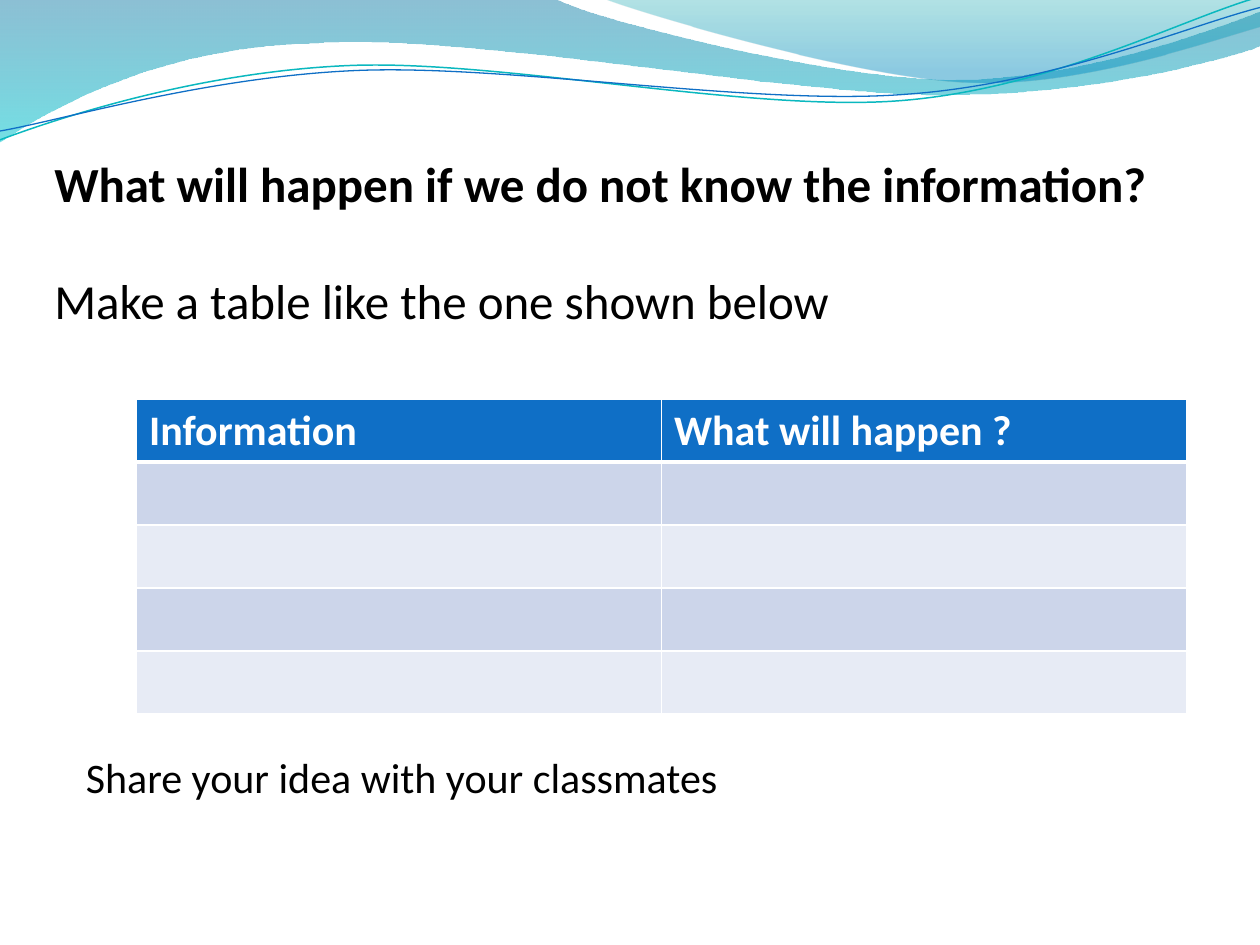
"""Build a classroom slide with a wave banner, a question and a table to fill in."""
import math

from lxml import etree
from pptx import Presentation
from pptx import util as u
from pptx.dml.color import RGBColor
from pptx.enum import text
from pptx.oxml.ns import qn

THEME = {
    "font": "Calibri", "ink": "000000", "paper": "FFFFFF", "header": "0F6FC6",
    "bands": ["CCD5EA", "E7EBF5"], "question": 28, "body": 24,
    "rule": 1, "header_rule": 3,
}
FRAME = {"word_wrap": True, "auto_size": text.MSO_AUTO_SIZE.SHAPE_TO_FIT_TEXT}
TILT = -2.7

deck = Presentation()
deck.slide_width, deck.slide_height = u.Inches(10), u.Inches(7.5)
slide = deck.slides.add_slide(deck.slide_layouts[6])
COL, ROW = deck.slide_width / 120, deck.slide_height / 90


def draw_wave(start, segments, closed):
    """Outline straight (one point) and cubic (three points) segments."""
    points = [start] + [point for segment in segments for point in segment]
    places = [(round(x * 12 * COL), round(y * 12 * ROW)) for x, y in points]
    builder = slide.shapes.build_freeform(*places[0])
    builder.add_line_segments(places[1:], close=closed)
    wave = builder.convert_to_shape()
    wave.shadow.inherit = False
    steps = iter(list(wave._element.iter(qn("a:lnTo"))))
    for segment in segments:
        first, *others = [next(steps) for _ in segment]
        if others:
            curve = etree.Element(qn("a:cubicBezTo"))
            first.addprevious(curve)
            for step in (first, *others):
                curve.append(step[0])
                step.getparent().remove(step)
    return wave


def write(paragraph, words, size, bold=False, color=THEME["ink"]):
    """Add one formatted run to a paragraph."""
    run = paragraph.add_run()
    run.text = words
    look = {"name": THEME["font"], "size": u.Pt(size), "bold": bold}
    for name, value in look.items():
        setattr(run.font, name, value)
    run.font.color.rgb = RGBColor.from_string(color)


swells = [
    ((0, 0), [
        [(4.4, -0.01)],
        [(4.76, 0.17), (6.64, 0.63), (7.58, 0.63)],
        [(8.53, 0.63), (9.58, 0.26), (10, 0.09)],
        [(10.01, 0.36)],
        [(9.83, 0.44), (8.7, 0.76), (7.46, 0.75)],
        [(6.22, 0.75), (3.82, 0.28), (2.57, 0.34)],
        [(1.29, 0.36), (0.46, 0.83), (-0.01, 1.13)],
        [(0, 0)],
    ], [(0, "0074A1", 45), (1, "00C6CF", 55)]),
    ((4.79, -0.01), [
        [(5.09, 0.11), (6.82, 0.62), (7.69, 0.65)],
        [(8.56, 0.69), (9.61, 0.32), (10, 0.21)],
        [(10, 0)],
        [(4.79, -0.01)],
    ], [(0, "00A1A9", 30), (0.8, "008BBF", 45)]),
]
for start, segments, tints in swells:
    swell = draw_wave(start, segments, True)
    swell.line.fill.background()
    swell.fill.gradient()
    swell.fill.gradient_angle = 270
    for stop, (position, color, _) in zip(swell.fill.gradient_stops, tints):
        stop.position = position
        stop.color.rgb = RGBColor.from_string(color)
    for tint, (_, _, opacity) in zip(swell._element.spPr.iter(qn("a:srgbClr")), tints):
        etree.SubElement(tint, qn("a:alpha"), val=str(opacity * 1000))

ripples = [
    ((4.99, 0.58), (0, 1.11), [
        [(0.48, 0.93), (1.58, 0.57), (2.77, 0.52)],
        [(3.95, 0.47), (5.93, 0.89), (7.13, 0.8)],
        [(8.33, 0.71), (9.38, 0.15), (9.98, -0.02)],
    ], "0AB8BF", 0.85),
    ((5, 0.59), (0, 1.04), [
        [(0.47, 0.96), (1.64, 0.61), (2.83, 0.56)],
        [(4.03, 0.51), (5.97, 0.84), (7.17, 0.75)],
        [(8.36, 0.67), (9.41, 0.21), (10, 0.06)],
    ], "0F6FC6", 0.75),
]
cos, sin = math.cos(math.radians(TILT)), math.sin(math.radians(TILT))
for (mid_x, mid_y), start, segments, color, width in ripples:
    (start,), *segments = [
        [(mid_x + (x - mid_x) * cos + (y - mid_y) * sin,
          mid_y + (y - mid_y) * cos - (x - mid_x) * sin) for x, y in segment]
        for segment in ([start], *segments)
    ]
    ripple = draw_wave(start, segments, False)
    ripple.rotation = TILT
    ripple.fill.background()
    ripple.line.color.rgb = RGBColor.from_string(color)
    ripple.line.width = u.Pt(width)

passages = [
    ((4, 14, 113, 22.2), THEME["question"], [
        ("What will happen if we do not know the information?", True, 0),
        ("Make a table like the one shown below", False, 33.5),
    ]),
    ((7, 71, 113, 6), THEME["body"], [("Share your idea with your classmates", False, 0)]),
]
for (left, top, width, height), size, lines in passages:
    passage = slide.shapes.add_textbox(
        round(left * COL), round(top * ROW), round(width * COL), round(height * ROW)
    ).text_frame
    for name, value in FRAME.items():
        setattr(passage, name, value)
    for index, (words, bold, gap) in enumerate(lines):
        paragraph = passage.add_paragraph() if index else passage.paragraphs[0]
        paragraph.space_before = u.Pt(gap)
        write(paragraph, words, size, bold)

headings = ["Information", "What will happen ?"]
answers = slide.shapes.add_table(
    5, len(headings), round(13 * COL), round(38 * ROW), round(100 * COL), round(30 * ROW)
).table
for r, row in enumerate(answers.rows):
    for c, cell in enumerate(row.cells):
        rules = dict.fromkeys(("lnL", "lnR", "lnT", "lnB"), THEME["rule"])
        if r < 2:
            rules["lnT" if r else "lnB"] = THEME["header_rule"]
        for side, weight in rules.items():
            rule = etree.SubElement(cell._tc.get_or_add_tcPr(), qn(f"a:{side}"),
                                    w=str(u.Pt(weight)))
            paint = etree.SubElement(rule, qn("a:solidFill"))
            etree.SubElement(paint, qn("a:srgbClr"), val=THEME["paper"])
        cell.fill.solid()
        shade = THEME["bands"][(r - 1) % 2] if r else THEME["header"]
        cell.fill.fore_color.rgb = RGBColor.from_string(shade)
        if r == 0:
            write(cell.text_frame.paragraphs[0], headings[c], THEME["body"], True, THEME["paper"])

deck.save("out.pptx")
